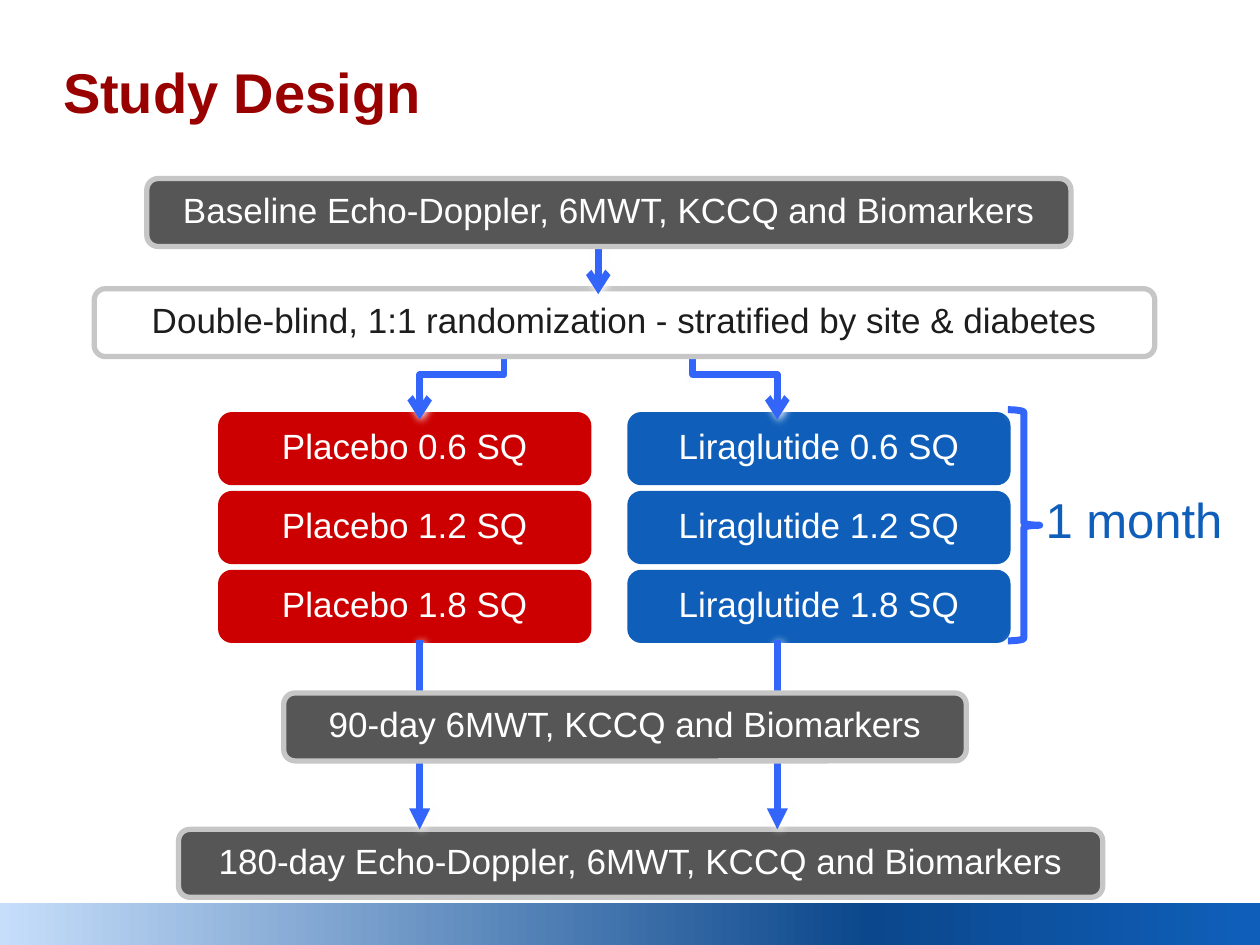
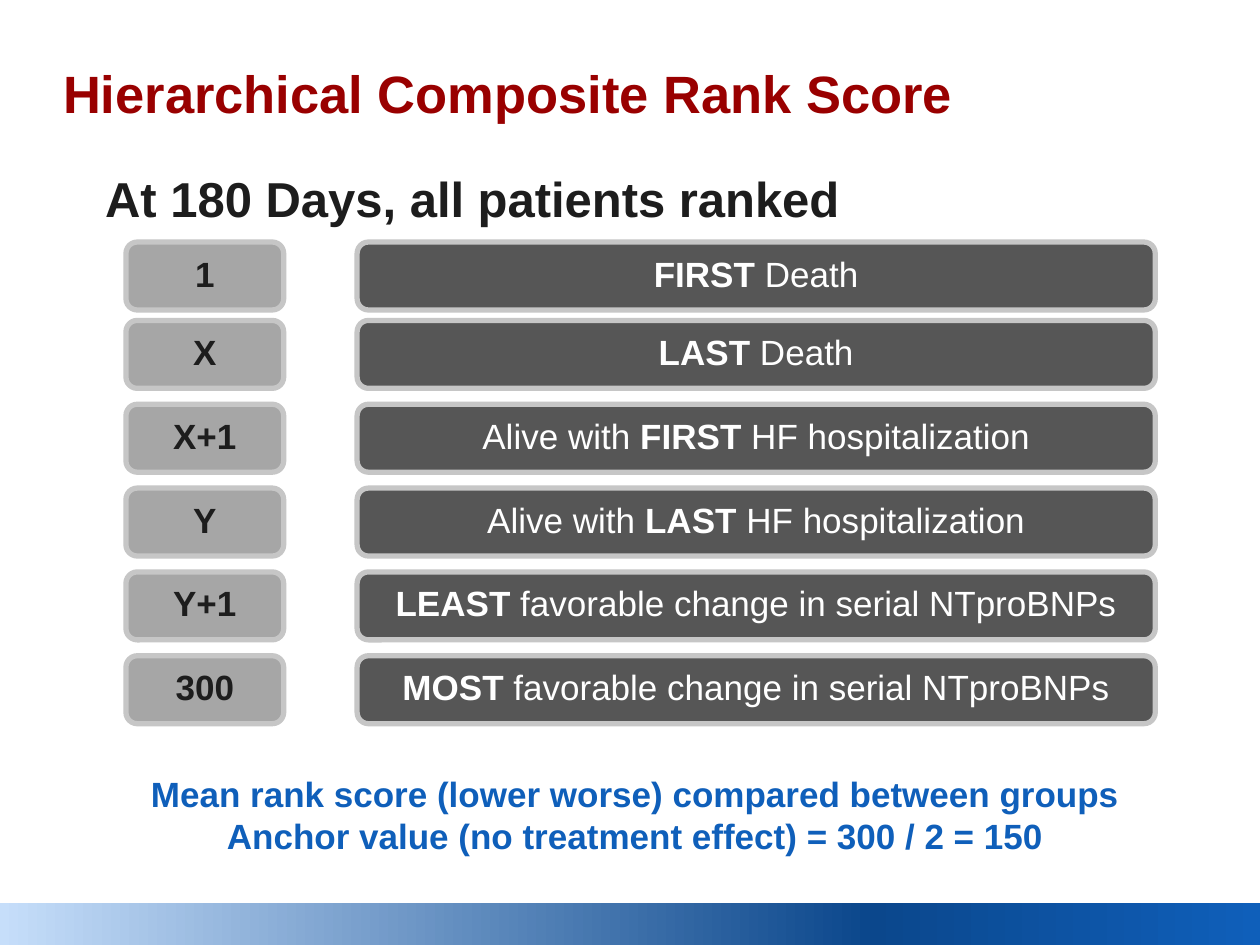
from copy import deepcopy

from lxml import etree
from pptx import Presentation
from pptx.dml.color import RGBColor
from pptx.enum.shapes import MSO_CONNECTOR, MSO_SHAPE
from pptx.enum.text import MSO_ANCHOR, MSO_AUTO_SIZE, PP_ALIGN
from pptx.oxml.ns import qn
from pptx.util import Cm, Pt

STRAIGHT = MSO_CONNECTOR.STRAIGHT
ELBOW = MSO_CONNECTOR.ELBOW
RECTANGLE = MSO_SHAPE.RECTANGLE
ROUNDED = MSO_SHAPE.ROUNDED_RECTANGLE
RIGHT_BRACE = MSO_SHAPE.RIGHT_BRACE
LEFT = PP_ALIGN.LEFT
CENTER = PP_ALIGN.CENTER
TOP = MSO_ANCHOR.TOP
MIDDLE = MSO_ANCHOR.MIDDLE
BOTTOM = MSO_ANCHOR.BOTTOM
NO_AUTOFIT = MSO_AUTO_SIZE.NONE

FONT = "Arial"
TITLE_RED = RGBColor(0x99, 0x00, 0x00)
PLACEBO_RED = RGBColor(0xCC, 0x00, 0x00)
DRUG_BLUE = RGBColor(0x0F, 0x5F, 0xBA)
FLOW_BLUE = RGBColor(0x33, 0x65, 0xFB)
DARK_GRAY = RGBColor(0x56, 0x56, 0x56)
MID_GRAY = RGBColor(0xA6, 0xA6, 0xA6)
EDGE_GRAY = RGBColor(0xC6, 0xC6, 0xC6)
INK = RGBColor(0x1D, 0x1D, 0x1D)
WHITE = RGBColor(0xFF, 0xFF, 0xFF)
BAND_STOPS = [
    (0, RGBColor(0xC6, 0xDE, 0xFA)),
    (0.69, RGBColor(0x0B, 0x47, 0x8C)),
    (1, DRUG_BLUE),
]

BOX_HEIGHT = 1.37
PLACEBO_X = 8.46
DRUG_X = 15.67
DOSES = ["0.6", "1.2", "1.8"]
ARMS = [
    ("Placebo", 4.45, 7.42, PLACEBO_RED),
    ("Liraglutide", 12.7, 7.62, DRUG_BLUE),
]
DOSE_TOP, DOSE_STEP = 8.36, 1.59
RANKS = [
    ("1", "*FIRST* Death"),
    ("X", "*LAST* Death"),
    ("X+1", "Alive with *FIRST* HF hospitalization"),
    ("Y", "Alive with *LAST* HF hospitalization"),
    ("Y+1", "*LEAST* favorable change in serial NTproBNPs"),
    ("300", "*MOST* favorable change in serial NTproBNPs"),
]
FIRST_RANK_TOP, SECOND_RANK_TOP, RANK_STEP = 4.88, 6.46, 1.69


def set_margins(frame, left, top, right, bottom):
    frame.margin_left, frame.margin_top = Cm(left), Cm(top)
    frame.margin_right, frame.margin_bottom = Cm(right), Cm(bottom)


def style_paragraph(paragraph, size, color, align=CENTER, bold=False):
    paragraph.alignment = align
    paragraph.font.name = FONT
    paragraph.font.size = Pt(size)
    paragraph.font.bold = bold
    paragraph.font.color.rgb = color


def add_band(slide):
    band = slide.shapes.add_shape(RECTANGLE, 0, Cm(18.2), Cm(25.4), Cm(0.85))
    band.shadow.inherit = False
    band.line.fill.background()
    band.fill.gradient()
    band.fill.gradient_angle = 0
    stop_list = band.element.spPr.find(qn("a:gradFill")).find(qn("a:gsLst"))
    stop_list.insert(1, deepcopy(stop_list[0]))
    for stop, (position, color) in zip(band.fill.gradient_stops, BAND_STOPS):
        stop.position = position
        stop.color.rgb = color


def add_titled_slide(prs, heading, size, width):
    slide = prs.slides.add_slide(prs.slide_layouts[5])
    add_band(slide)
    title = slide.shapes.title
    title.left, title.top = Cm(1.27), Cm(1.27)
    title.width, title.height = Cm(width), Cm(1.24)
    frame = title.text_frame
    frame.text = heading
    frame.auto_size = NO_AUTOFIT
    frame.vertical_anchor = BOTTOM
    set_margins(frame, 0, 0, 0, 0)
    frame.paragraphs[0].line_spacing = 1.06
    style_paragraph(frame.paragraphs[0], size, TITLE_RED, LEFT, True)
    return slide


def add_box(slide, text, left, top, width, fill=DARK_GRAY, edge=EDGE_GRAY,
            color=WHITE, bold=False):
    box = slide.shapes.add_shape(ROUNDED, Cm(left), Cm(top), Cm(width), Cm(BOX_HEIGHT))
    box.shadow.inherit = False
    box.fill.solid()
    box.fill.fore_color.rgb = fill
    box.line.color.rgb = edge
    box.line.width = Pt(3)
    frame = box.text_frame
    frame.word_wrap = True
    frame.vertical_anchor = MIDDLE
    set_margins(frame, 0.25, 0.13, 0.25, 0.25)
    paragraph = frame.paragraphs[0]
    style_paragraph(paragraph, 20, color, bold=bold)
    for index, piece in enumerate(text.split("*")):
        if piece:
            run = paragraph.add_run()
            run.text = piece
            if index % 2:
                run.font.bold = True


def add_text(slide, lines, left, top, width, height, size, color,
             align=CENTER, bold=False):
    frame = slide.shapes.add_textbox(Cm(left), Cm(top), Cm(width), Cm(height)).text_frame
    frame.word_wrap = True
    frame.vertical_anchor = TOP
    frame.text = "\n".join(lines)
    for paragraph in frame.paragraphs:
        style_paragraph(paragraph, size, color, align, bold)
    return frame


def style_flow_line(shape):
    shape.line.color.rgb = FLOW_BLUE
    shape.line.width = Pt(4)
    effects = etree.SubElement(shape.element.spPr, qn("a:effectLst"))
    halo = etree.SubElement(effects, qn("a:outerShdw"), blurRad=str(Pt(5)),
                            dist=str(Pt(1.4)), dir="2700000")
    etree.SubElement(halo, qn("a:srgbClr"), val=str(WHITE))


def add_arrow(slide, kind, start, end, head):
    arrow = slide.shapes.add_connector(kind, *map(Cm, start + end))
    style_flow_line(arrow)
    etree.SubElement(arrow.element.spPr.find(qn("a:ln")), qn("a:tailEnd"), type=head)
    return arrow


def add_down_elbow(slide, start, end):
    (x1, y1), (x2, y2) = start, end
    middle_x, middle_y = (x1 + x2) / 2, (y1 + y2) / 2
    half_span, half_drop = abs(x2 - x1) / 2, (y2 - y1) / 2
    side = 1 if x2 < x1 else -1
    elbow = add_arrow(slide, ELBOW,
                      (middle_x - side * half_drop, middle_y - half_span),
                      (middle_x + side * half_drop, middle_y + half_span), "arrow")
    degrees = 90 if side == 1 else 270
    elbow.element.spPr.find(qn("a:xfrm")).set("rot", str(degrees * 60000))


def add_brace(slide, left, top, width, height):
    brace = slide.shapes.add_shape(RIGHT_BRACE, Cm(left), Cm(top), Cm(width), Cm(height))
    brace.fill.background()
    style_flow_line(brace)


def build_study_design(prs):
    slide = add_titled_slide(prs, "Study Design", 32, 14.81)
    for arm, left, width, color in ARMS:
        for row, dose in enumerate(DOSES):
            add_box(slide, f"{arm} {dose} SQ", left, DOSE_TOP + row * DOSE_STEP,
                    width, color, color)
    add_box(slide, "180-day Echo-Doppler, 6MWT, KCCQ and Biomarkers", 3.6, 16.72, 18.63)
    add_down_elbow(slide, (10.16, 6.65), (PLACEBO_X, 8.46))
    add_down_elbow(slide, (13.97, 6.65), (DRUG_X, 8.46))
    add_box(slide, "Double-blind, 1:1 randomization - stratified by site & diabetes",
            1.9, 5.82, 21.38, WHITE, color=INK)
    add_arrow(slide, STRAIGHT, (12.06, 4.45), (12.06, 5.93), "arrow")
    add_box(slide, "Baseline Echo-Doppler, 6MWT, KCCQ and Biomarkers", 2.96, 3.6, 18.63)
    add_brace(slide, 20.32, 8.26, 0.64, 4.66)
    add_text(slide, ["1 month"], 20.32, 9.75, 5.08, 1.45, 28, DRUG_BLUE)
    for x in (DRUG_X, PLACEBO_X):
        add_arrow(slide, STRAIGHT, (x, 12.9), (x, 16.72), "triangle")
    add_box(slide, "90-day 6MWT, KCCQ and Biomarkers", 5.72, 13.97, 13.76)


def build_rank_score(prs):
    slide = add_titled_slide(prs, "Hierarchical Composite Rank Score", 30, 19.05)
    subtitle = add_text(slide, ["At 180 Days, all patients ranked"],
                        2.12, 3.39, 20.96, 1.19, 28, INK, LEFT, True)
    set_margins(subtitle, 0, 0, 0, 0)
    add_text(slide, ["Mean rank score (lower worse) compared between groups",
                     "Anchor value (no treatment effect) = 300 / 2 = 150"],
             1.27, 15.45, 23.07, 1.96, 20, DRUG_BLUE, bold=True)
    for row, (rank, outcome) in enumerate(RANKS):
        top = SECOND_RANK_TOP + (row - 1) * RANK_STEP if row else FIRST_RANK_TOP
        add_box(slide, outcome, 7.2, top, 16.09)
        add_box(slide, rank, 2.54, top, 3.18, MID_GRAY, color=INK, bold=True)


def main():
    prs = Presentation()
    prs.slide_width, prs.slide_height = Cm(25.4), Cm(19.05)
    build_study_design(prs)
    build_rank_score(prs)
    prs.save("out.pptx")


if __name__ == "__main__":
    main()
